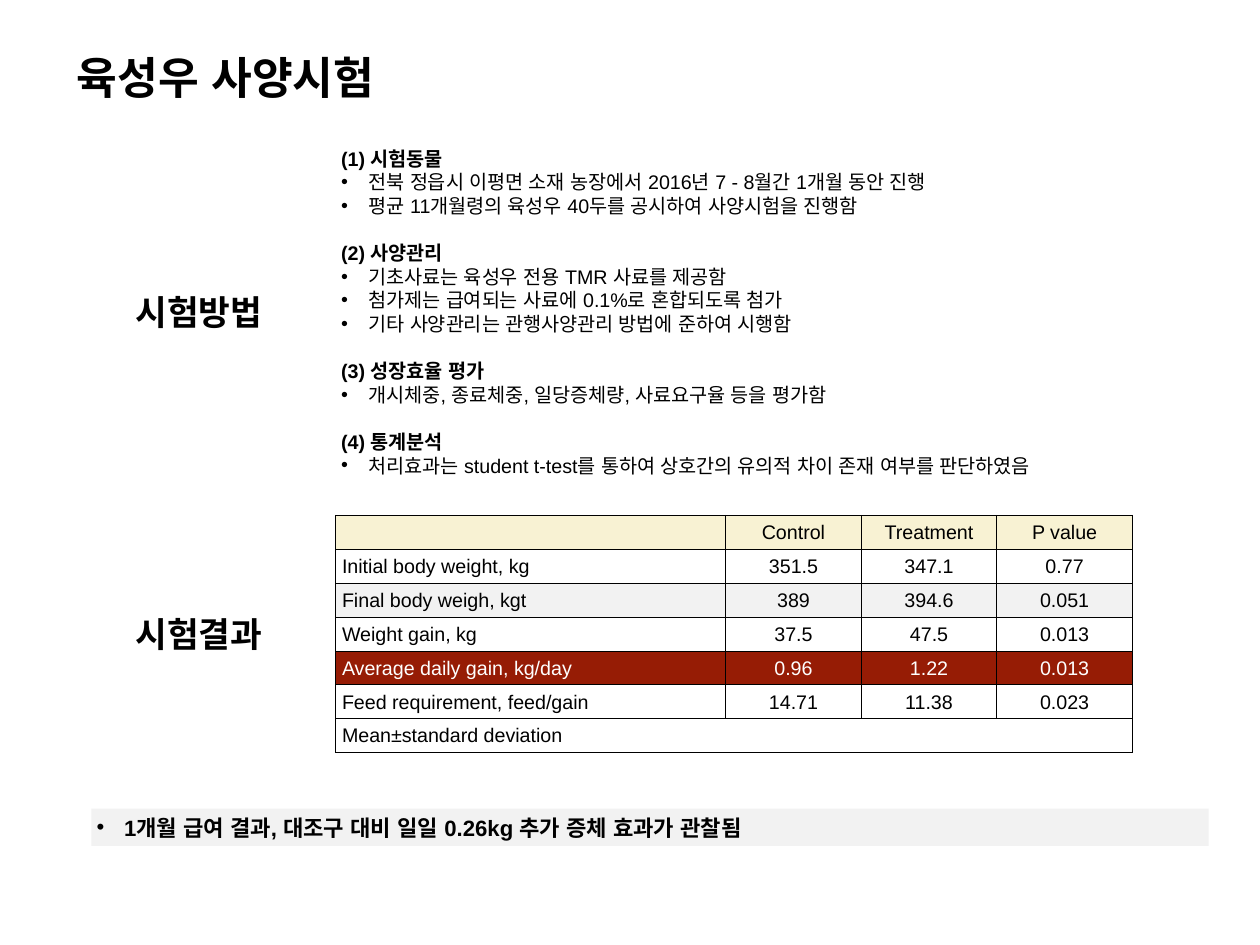
from pptx import Presentation
from pptx.dml.color import RGBColor
from pptx.enum.shapes import MSO_SHAPE
from pptx.enum.text import MSO_ANCHOR, PP_ALIGN
from pptx.oxml.ns import qn
from pptx.util import Inches, Pt
from lxml.etree import SubElement

TITLE = "육성우 사양시험"
METHOD_LABEL, RESULT_LABEL = "시험방법", "시험결과"
METHODS = [
    ("(1) 시험동물", [
        "전북 정읍시 이평면 소재 농장에서 2016년 7 - 8월간 1개월 동안 진행",
        "평균 11개월령의 육성우 40두를 공시하여 사양시험을 진행함"]),
    ("(2) 사양관리", [
        "기초사료는 육성우 전용 TMR 사료를 제공함",
        "첨가제는 급여되는 사료에 0.1%로 혼합되도록 첨가",
        "기타 사양관리는 관행사양관리 방법에 준하여 시행함"]),
    ("(3) 성장효율 평가", [
        "개시체중, 종료체중, 일당증체량, 사료요구율 등을 평가함"]),
    ("(4) 통계분석", [
        "처리효과는 student t-test를 통하여 상호간의 유의적 차이 존재 여부를 판단하였음"]),
]
RESULTS = [
    ("", "Control", "Treatment", "P value"),
    ("Initial body weight, kg", "351.5", "347.1", "0.77"),
    ("Final body weigh, kgt", "389", "394.6", "0.051"),
    ("Weight gain, kg", "37.5", "47.5", "0.013"),
    ("Average daily gain, kg/day", "0.96", "1.22", "0.013"),
    ("Feed requirement, feed/gain", "14.71", "11.38", "0.023"),
    ("Mean±standard deviation", "", "", ""),
]
CONCLUSION = "1개월 급여 결과, 대조구 대비 일일 0.26kg 추가 증체 효과가 관찰됨"

FONT = "Arial"
BLACK = RGBColor(0x00, 0x00, 0x00)
WHITE = RGBColor(0xFF, 0xFF, 0xFF)
CREAM = RGBColor(0xF8, 0xF2, 0xD3)
GREY = RGBColor(0xF2, 0xF2, 0xF2)
RED = RGBColor(0x96, 0x1C, 0x05)
ROW_FILLS = {0: CREAM, 2: GREY, 4: RED}

WIDTH, HEIGHT = 14.22, 10.67
BODY_LEFT, BODY_WIDTH = 3.79, 8.99
METHOD_TOP, METHOD_HEIGHT = 1.58, 3.88
TABLE_TOP, ROW_HEIGHT = 5.82, 0.383
COLUMNS = (4.4, 1.53, 1.53, 1.53)
LABEL_LEFT, LABEL_WIDTH, LABEL_HEIGHT = 1.4, 1.69, 0.58
PADDING, INDENT = 0.06, 0.31


def write(p, text, size, bold=False, color=BLACK, align=PP_ALIGN.JUSTIFY):
    p.text = text
    p.alignment = align
    for r in p.runs:
        r.font.name, r.font.size, r.font.bold = FONT, Pt(size), bold
        r.font.color.rgb = color
        SubElement(r.font._element, qn("a:ea"), typeface=FONT)


def add_bullet(p):
    pPr = p._p.get_or_add_pPr()
    pPr.set("marL", str(Inches(INDENT)))
    pPr.set("indent", str(-Inches(INDENT)))
    SubElement(pPr, qn("a:buFont"), typeface=FONT)
    SubElement(pPr, qn("a:buChar"), char="•")


def prepare(sp, wrap=True):
    tf = sp.text_frame
    tf.word_wrap = wrap
    tf.vertical_anchor = MSO_ANCHOR.MIDDLE
    tf.margin_left = tf.margin_right = Inches(PADDING)
    tf.margin_top = tf.margin_bottom = Inches(PADDING)
    return tf


def add_heading(s, text, size, left, top, width, height):
    sp = s.shapes.add_textbox(*map(Inches, (left, top, width, height)))
    write(prepare(sp, False).paragraphs[0], text, size, True, align=PP_ALIGN.CENTER)


def add_methods(s):
    sp = s.shapes.add_textbox(*map(Inches, (BODY_LEFT, METHOD_TOP, BODY_WIDTH, METHOD_HEIGHT)))
    tf = prepare(sp)
    for i, (heading, points) in enumerate(METHODS):
        p = tf.add_paragraph() if i else tf.paragraphs[0]
        write(p, heading, 16, True)
        p.space_before = Pt(19.2 if i else 0)
        for point in points:
            p = tf.add_paragraph()
            write(p, point, 16)
            add_bullet(p)


def add_borders(cell):
    tcPr = cell._tc.get_or_add_tcPr()
    for side in ("a:lnL", "a:lnR", "a:lnT", "a:lnB"):
        ln = SubElement(tcPr, qn(side), w=str(Pt(1)))
        SubElement(SubElement(ln, qn("a:solidFill")), qn("a:srgbClr"), val=str(BLACK))


def add_results(s):
    rows, cols = len(RESULTS), len(COLUMNS)
    frame = s.shapes.add_table(rows, cols, *map(
        Inches, (BODY_LEFT, TABLE_TOP, BODY_WIDTH, rows * ROW_HEIGHT)))
    table = frame.table
    table.first_row = table.horz_banding = False
    for column, width in zip(table.columns, COLUMNS):
        column.width = Inches(width)
    for i, values in enumerate(RESULTS):
        table.rows[i].height = Inches(ROW_HEIGHT)
        for j, value in enumerate(values):
            cell = table.cell(i, j)
            add_borders(cell)
            if i in ROW_FILLS:
                cell.fill.solid()
                cell.fill.fore_color.rgb = ROW_FILLS[i]
            else:
                cell.fill.background()
            cell.vertical_anchor = MSO_ANCHOR.MIDDLE
            cell.margin_left = Inches(0.01 if j else 0.07)
            cell.margin_right = cell.margin_top = Inches(0.01)
            cell.margin_bottom = 0
            color = WHITE if ROW_FILLS.get(i) == RED else BLACK
            align = PP_ALIGN.CENTER if j else PP_ALIGN.LEFT
            write(cell.text_frame.paragraphs[0], value, 16, color=color, align=align)
    table.cell(rows - 1, 0).merge(table.cell(rows - 1, cols - 1))


def add_conclusion(s):
    sp = s.shapes.add_shape(MSO_SHAPE.RECTANGLE, *map(Inches, (1.03, 9.13, 12.61, 0.42)))
    sp.shadow.inherit = False
    sp.fill.solid()
    sp.fill.fore_color.rgb = GREY
    sp.line.fill.background()
    p = prepare(sp).paragraphs[0]
    write(p, CONCLUSION, 18, True)
    add_bullet(p)


def main():
    prs = Presentation()
    prs.slide_width, prs.slide_height = Inches(WIDTH), Inches(HEIGHT)
    s = prs.slides.add_slide(prs.slide_layouts[6])
    add_results(s)
    add_methods(s)
    add_heading(s, TITLE, 36, 0.67, 0.51, 3.75, 0.72)
    for label, top, height in ((METHOD_LABEL, METHOD_TOP, METHOD_HEIGHT),
                               (RESULT_LABEL, TABLE_TOP, len(RESULTS) * ROW_HEIGHT)):
        middle = top + (height - LABEL_HEIGHT) / 2
        add_heading(s, label, 28, LABEL_LEFT, middle, LABEL_WIDTH, LABEL_HEIGHT)
    add_conclusion(s)
    prs.save("out.pptx")


if __name__ == "__main__":
    main()
